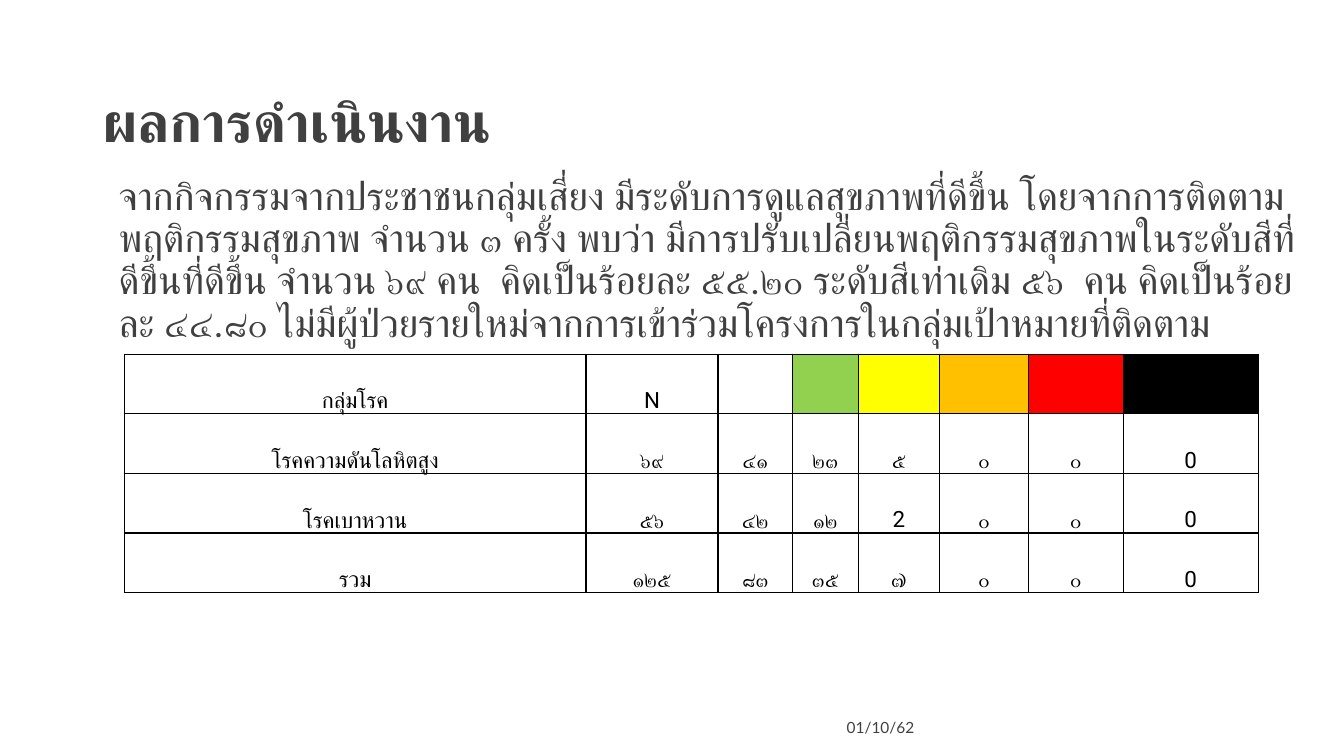
from lxml.etree import SubElement
from pptx import Presentation
from pptx.dml.color import RGBColor
from pptx.enum.text import MSO_ANCHOR as Anchor, PP_ALIGN as Align
from pptx.oxml.ns import qn
from pptx.util import Pt

BLACK = RGBColor(0, 0, 0)
GREY = RGBColor(0x40, 0x40, 0x40)
WHITE = RGBColor(0xFF, 0xFF, 0xFF)
GREEN = RGBColor(0x92, 0xD0, 0x50)
YELLOW = RGBColor(0xFF, 0xFF, 0)
ORANGE = RGBColor(0xFF, 0xC0, 0)
RED = RGBColor(0xFF, 0, 0)

TITLE = "ผลการดำเนินงาน"
SUMMARY = (
    "จากกิจกรรมจากประชาชนกลุ่มเสี่ยง มีระดับการดูแลสุขภาพที่ดีขึ้น "
    "โดยจากการติดตามพฤติกรรมสุขภาพ จำนวน ๓ ครั้ง พบว่า "
    "มีการปรับเปลี่ยนพฤติกรรมสุขภาพในระดับสีที่ดีขึ้นที่ดีขึ้น จำนวน ๖๙ คน  "
    "คิดเป็นร้อยละ ๕๕.๒๐ ระดับสีเท่าเดิม ๕๖  คน คิดเป็นร้อยละ ๔๔.๘๐ "
    "ไม่มีผู้ป่วยรายใหม่จากการเข้าร่วมโครงการในกลุ่มเป้าหมายที่ติดตาม"
)
DATE = "01/10/62"
RESULTS = [
    ["กลุ่มโรค", "N", "", "", "", "", "", ""],
    ["โรคความดันโลหิตสูง", "๖๙", "๔๑", "๒๓", "๕", "๐", "๐", "0"],
    ["โรคเบาหวาน", "๕๖", "๔๒", "๑๒", "2", "๐", "๐", "0"],
    ["รวม", "๑๒๕", "๘๓", "๓๕", "๗", "๐", "๐", "0"],
]
LEVEL_COLORS = [None, WHITE, WHITE, GREEN, YELLOW, ORANGE, RED, BLACK]
COLUMN_WIDTHS = [329.76, 94.32, 53.28, 46.8, 58.32, 63.36, 67.68, 96.48]


def style(paragraph, face, size, color, bold=False):
    font = paragraph.font
    font.name, font.size, font.bold = face, Pt(size), bold
    font.color.rgb = color
    defaults = paragraph._p.pPr.find(qn("a:defRPr"))
    SubElement(defaults, qn("a:cs"), typeface=face)


def add_text(slide, box, text, face, size, anchor=Anchor.TOP,
             align=Align.LEFT, spacing=None, bold=False):
    frame = slide.shapes.add_textbox(*map(Pt, box)).text_frame
    frame.word_wrap = True
    frame.vertical_anchor = anchor
    paragraph = frame.paragraphs[0]
    paragraph.text = text
    paragraph.alignment = align
    paragraph.line_spacing = spacing
    style(paragraph, face, size, GREY, bold)


def outline(cell):
    properties = cell._tc.get_or_add_tcPr()
    for position, side in enumerate(("lnL", "lnR", "lnT", "lnB")):
        line = SubElement(properties, qn(f"a:{side}"), w=str(Pt(1)))
        fill = SubElement(line, qn("a:solidFill"))
        SubElement(fill, qn("a:srgbClr"), val=str(BLACK))
        properties.insert(position, line)


def fill_cell(cell, text, color):
    cell.margin_left = cell.margin_right = Pt(5)
    cell.margin_top = cell.margin_bottom = 0
    cell.vertical_anchor = Anchor.BOTTOM
    if color is None:
        cell.fill.background()
    else:
        cell.fill.solid()
        cell.fill.fore_color.rgb = color
    outline(cell)
    paragraph = cell.text_frame.paragraphs[0]
    paragraph.text = text
    paragraph.alignment = Align.CENTER
    style(paragraph, "Roboto" if text.isascii() else "Times New Roman", 16, BLACK)


def add_results(slide, box):
    table = slide.shapes.add_table(
        len(RESULTS), len(COLUMN_WIDTHS), *map(Pt, box)).table
    table.first_row = table.horz_banding = False
    for column, width in zip(table.columns, COLUMN_WIDTHS):
        column.width = Pt(width)
    for row, values in enumerate(RESULTS):
        table.rows[row].height = Pt(box[3] / len(RESULTS))
        for column, value in enumerate(values):
            color = LEVEL_COLORS[column] if row == 0 else None
            fill_cell(table.cell(row, column), value, color)


def main():
    deck = Presentation()
    deck.slide_width, deck.slide_height = Pt(960), Pt(540)
    slide = deck.slides.add_slide(deck.slide_layouts[6])
    add_text(slide, (66.24, 28.8, 774, 84.96), TITLE, "Roboto", 40,
             anchor=Anchor.BOTTOM, spacing=0.9, bold=True)
    add_text(slide, (77.76, 122.4, 861.84, 273.6), SUMMARY, "Roboto", 28,
             spacing=0.9)
    add_text(slide, (552.24, 505.44, 108, 28.8), DATE, "Lato", 11,
             anchor=Anchor.MIDDLE, align=Align.RIGHT)
    add_results(slide, (88.8, 253, 810, 170.4))
    deck.save("out.pptx")


if __name__ == "__main__":
    main()
